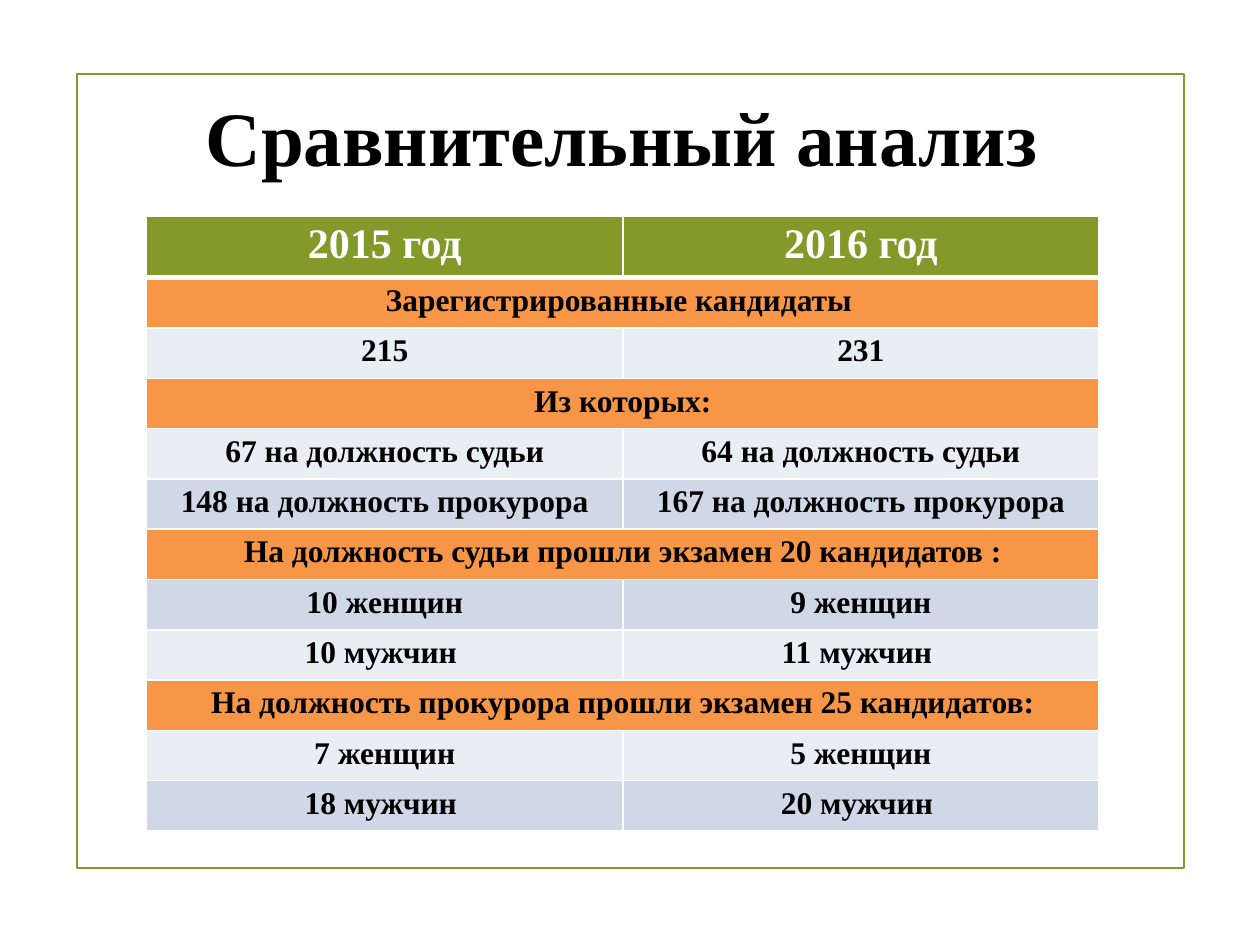
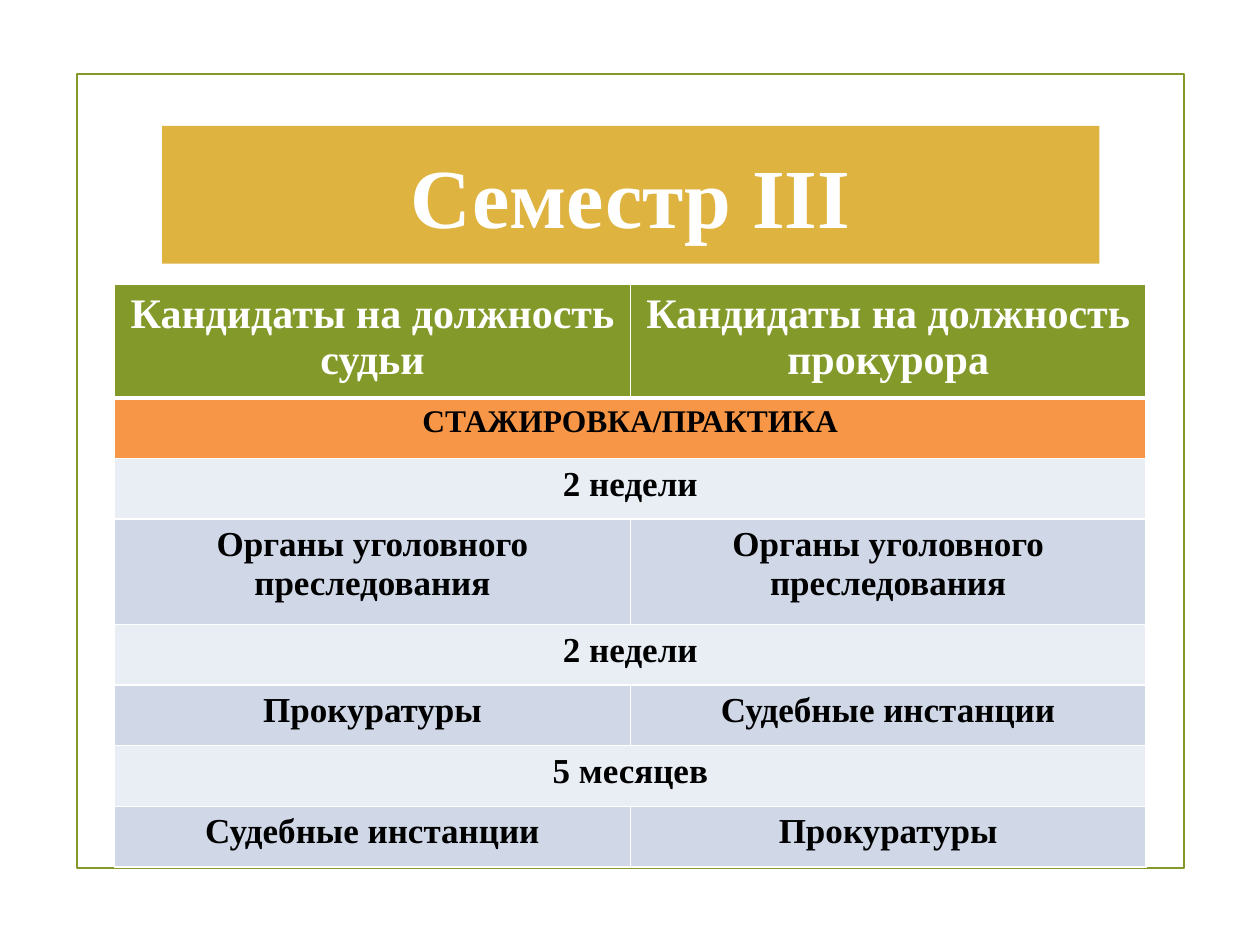
from lxml import etree
from pptx import Presentation
from pptx.dml.color import RGBColor
from pptx.enum import shapes, text
from pptx.oxml import ns
from pptx.util import Pt

GREEN, ORANGE, GOLD = "83992A", "F79646", "DEB340"
LIGHT, DARK = "E9EDF4", "D0D8E8"
WHITE, BLACK = "FFFFFF", "000000"


def color(value):
    return RGBColor.from_string(value)


class Slides:
    font = "Times New Roman"
    header_size = 24
    band_size = 18

    def __init__(self):
        self.deck = Presentation()
        self.deck.slide_width, self.deck.slide_height = Pt(720), Pt(540)
        self.page = None

    def new_page(self):
        self.page = self.deck.slides.add_slide(self.deck.slide_layouts[6])
        self.rectangle(44, 42.5, 632.8, 453.6, line=GREEN)

    def rectangle(self, left, top, width, height, fill=None, line=None):
        box = self.page.shapes.add_shape(
            shapes.MSO_SHAPE.RECTANGLE, Pt(left), Pt(top), Pt(width), Pt(height))
        box.shadow.inherit = False
        if fill:
            box.fill.solid()
            box.fill.fore_color.rgb = color(fill)
        else:
            box.fill.background()
        if line:
            box.line.color.rgb = color(line)
            box.line.width = Pt(1.25)
        else:
            box.line.fill.background()
        return box

    def add_words(self, frame, words, size, ink):
        para = frame.paragraphs[0]
        para.alignment = text.PP_ALIGN.CENTER
        span = para.add_run()
        span.text = words
        span.font.name = self.font
        span.font.size = Pt(size)
        span.font.bold = True
        span.font.color.rgb = color(ink)

    def title(self, words, left, top, width, height, size, ink, fill=None):
        if fill:
            box = self.rectangle(left, top, width, height, fill)
        else:
            box = self.page.shapes.add_textbox(Pt(left), Pt(top), Pt(width), Pt(height))
        box.text_frame.word_wrap = True
        box.text_frame.vertical_anchor = text.MSO_ANCHOR.MIDDLE
        self.add_words(box.text_frame, words, size, ink)

    def borders(self, cell, row):
        properties = cell._tc.get_or_add_tcPr()
        top = 3 if row == 1 else 1
        bottom = 3 if row == 0 else 1
        for side, width in (("L", 1), ("R", 1), ("T", top), ("B", bottom)):
            edge = etree.SubElement(properties, ns.qn("a:ln" + side), w=str(Pt(width)))
            paint = etree.SubElement(edge, ns.qn("a:solidFill"))
            etree.SubElement(paint, ns.qn("a:srgbClr"), val=WHITE)

    def row_style(self, row, bands, body_size):
        if row == 0:
            return GREEN, self.header_size, WHITE
        if row in bands:
            return ORANGE, self.band_size, BLACK
        return (DARK if row % 2 else LIGHT), body_size, BLACK

    def table(self, left, top, width, heights, rows, bands, body_size, inset):
        grid = self.page.shapes.add_table(
            len(rows), 2, Pt(left), Pt(top), Pt(width), Pt(sum(heights))).table
        for column in grid.columns:
            column.width = Pt(width / 2)
        for index, words in enumerate(rows):
            grid.rows[index].height = Pt(heights[index])
            fill, size, ink = self.row_style(index, bands, body_size)
            for column in range(2):
                cell = grid.cell(index, column)
                self.borders(cell, index)
                cell.fill.solid()
                cell.fill.fore_color.rgb = color(fill)
                cell.margin_left = cell.margin_right = Pt(inset[0])
                cell.margin_top = cell.margin_bottom = Pt(inset[1])
            if len(words) == 1:
                grid.cell(index, 0).merge(grid.cell(index, 1))
            for column, entry in enumerate(words):
                self.add_words(grid.cell(index, column).text_frame, entry, size, ink)


def comparison(slides):
    slides.new_page()
    slides.title("Сравнительный анализ", 87.8, 31.7, 535, 91.4, 44, BLACK)
    rows = [
        ("2015 год", "2016 год"),
        ("Зарегистрированные кандидаты ",),
        ("215", "231"),
        ("Из которых:",),
        ("67 на должность судьи", "64 на должность судьи"),
        ("148 на должность прокурора", "167 на должность прокурора"),
        ("На должность судьи прошли экзамен 20 кандидатов :",),
        ("10 женщин", "9 женщин"),
        ("10 мужчин ", "11 мужчин "),
        ("На должность прокурора прошли экзамен 25 кандидатов:",),
        ("7 женщин", "5 женщин"),
        ("18 мужчин ", "20 мужчин "),
    ]
    bands = [index for index, words in enumerate(rows) if len(words) == 1]
    slides.table(83.8, 123.4, 544.2, [28.75] * len(rows), rows, bands, 18, (6, 3.25))


def semester(slides):
    slides.new_page()
    slides.title("Семестр III", 92.6, 72, 535.7, 78.7, 48, WHITE, GOLD)
    rows = [
        ("Кандидаты на должность судьи", "Кандидаты на должность прокурора"),
        ("СТАЖИРОВКА/ПРАКТИКА",),
        ("2 недели",),
        ("Органы уголовного преследования",) * 2,
        ("2 недели",),
        ("Прокуратуры", "Судебные инстанции"),
        ("5 месяцев",),
        ("Судебные инстанции", "Прокуратуры"),
    ]
    heights = [60.4 if index in (0, 3) else 34.6 for index in range(len(rows))]
    slides.table(65.5, 162.6, 589.4, heights, rows, [1], 20, (7.2, 3.6))


def main():
    slides = Slides()
    comparison(slides)
    semester(slides)
    slides.deck.save("out.pptx")


if __name__ == "__main__":
    main()
